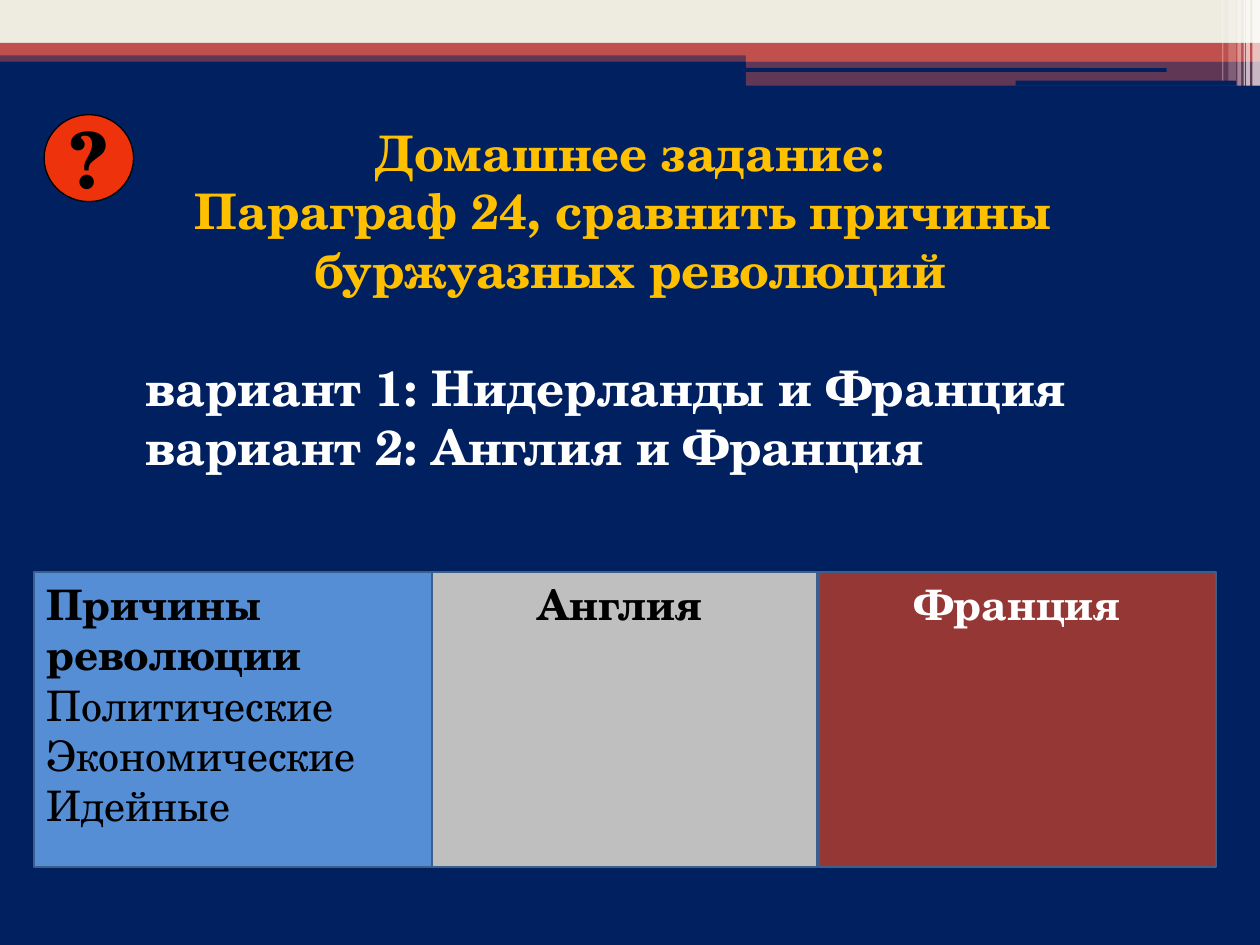
"""Builds the homework slide that compares the causes of revolutions."""
import pptx
import pptx.dml.color
import pptx.enum.shapes
import pptx.enum.text
import pptx.oxml
import pptx.oxml.ns
import pptx.util
from pptx.util import Inches

SHAPE = pptx.enum.shapes.MSO_SHAPE
ALIGN = pptx.enum.text.PP_ALIGN
ANCHOR = pptx.enum.text.MSO_ANCHOR
NAVY, RED, CREAM, WHITE, BLACK = "002060", "C0504D", "EEECE1", "FFFFFF", "000000"
GOLD, BORDER = "FFC000", "3A5F8C"


def color(hex_code):
    return pptx.dml.color.RGBColor.from_string(hex_code)


class HomeworkSlide:
    font = "TeX Gyre Schola"

    def __init__(self, presentation):
        self.slide = presentation.slides.add_slide(presentation.slide_layouts[6])
        self.slide.background.fill.solid()
        self.slide.background.fill.fore_color.rgb = color(NAVY)

    def block(self, kind, box, fill, alpha=100, border=None, border_width=1.5):
        block = self.slide.shapes.add_shape(kind, *map(Inches, box))
        block.shadow.inherit = False
        block.fill.solid()
        block.fill.fore_color.rgb = color(fill)
        if alpha < 100:
            tint = block.element.spPr.find(".//" + pptx.oxml.ns.qn("a:srgbClr"))
            opacity = pptx.oxml.parse_xml(
                f'<a:alpha {pptx.oxml.ns.nsdecls("a")} val="{alpha * 1000}"/>')
            tint.append(opacity)
        if border:
            block.line.color.rgb = color(border)
            block.line.width = pptx.util.Pt(border_width)
        else:
            block.line.fill.background()
        return block

    def add_lines(self, frame, lines, size, align, anchor, wrap=True):
        frame.word_wrap = wrap
        frame.vertical_anchor = anchor
        for index, (words, ink, bold) in enumerate(lines):
            paragraph = frame.paragraphs[0] if index == 0 else frame.add_paragraph()
            paragraph.alignment = align
            run = paragraph.add_run()
            run.text = words
            run.font.name = self.font
            run.font.size = pptx.util.Pt(size)
            run.font.bold = bold
            run.font.color.rgb = color(ink)

    def panel(self, left, width, fill, lines, align):
        panel = self.block(SHAPE.RECTANGLE, (left, 4.54, width, 2.34), fill, border=BORDER)
        self.add_lines(panel.text_frame, lines, 24, align, ANCHOR.TOP)

    def badge(self, box, mark):
        badge = self.block(SHAPE.OVAL, box, "EE320C", border=BLACK, border_width=0.75)
        self.add_lines(badge.text_frame, [(mark, BLACK, True)], 44,
                       ALIGN.CENTER, ANCHOR.MIDDLE, wrap=False)

    def assignment(self, box, task, variants):
        frame = self.slide.shapes.add_textbox(*map(Inches, box)).text_frame
        lines = [(words, GOLD, True) for words in task]
        lines += [(words, WHITE, True) for words in variants]
        self.add_lines(frame, lines, 28, ALIGN.CENTER, ANCHOR.MIDDLE)
        variant_lines = frame.paragraphs[len(task):]
        for paragraph in variant_lines:
            paragraph.alignment = ALIGN.LEFT
        variant_lines[0].space_before = pptx.util.Pt(33.6)


def main():
    presentation = pptx.Presentation()
    presentation.slide_width, presentation.slide_height = Inches(10), Inches(7.5)
    homework = HomeworkSlide(presentation)

    for box, fill, alpha in [
        ((0, 0.4, 10, 0.09), RED, 50),
        ((0, 0, 10, 0.34), CREAM, 100),
        ((0, 0.34, 10, 0.1), RED, 100),
        ((5.92, 0.39, 4.08, 0.1), RED, 100),
        ((5.92, 0.48, 4.08, 0.2), RED, 50),
    ]:
        homework.block(SHAPE.RECTANGLE, box, fill, alpha)
    for box in [(5.91, 0.54, 3.35, 0.03), (8.06, 0.64, 1.75, 0.04)]:
        homework.block(SHAPE.ROUNDED_RECTANGLE, box, NAVY)
    for left, width, height, alpha in [
        (9.94, 0.06, 0.68, 65), (9.89, 0.03, 0.68, 65), (9.87, 0.01, 0.68, 60),
        (9.82, 0.03, 0.68, 40), (9.75, 0.06, 0.64, 20), (9.7, 0.01, 0.64, 30),
    ]:
        homework.block(SHAPE.RECTANGLE, (left, 0, width, height), WHITE, alpha)

    homework.badge((0.35, 0.91, 0.71, 0.69), "?")
    homework.panel(3.35, 3.14, "BFBFBF", [("Англия", BLACK, True)], ALIGN.CENTER)
    homework.panel(6.5, 3.15, "953735", [("Франция", WHITE, True)], ALIGN.CENTER)
    causes = [("Причины революции", BLACK, True)]
    causes += [(cause, BLACK, False) for cause in ("Политические", "Экономические", "Идейные")]
    homework.panel(0.27, 3.16, "558ED5", causes, ALIGN.LEFT)
    homework.assignment(
        (1.06, 0.6, 7.88, 3.54),
        ["Домашнее задание:", "Параграф 24, сравнить причины ", "буржуазных революций"],
        ["вариант 1: Нидерланды и Франция", "вариант 2: Англия и Франция"])
    presentation.save("out.pptx")


if __name__ == "__main__":
    main()
